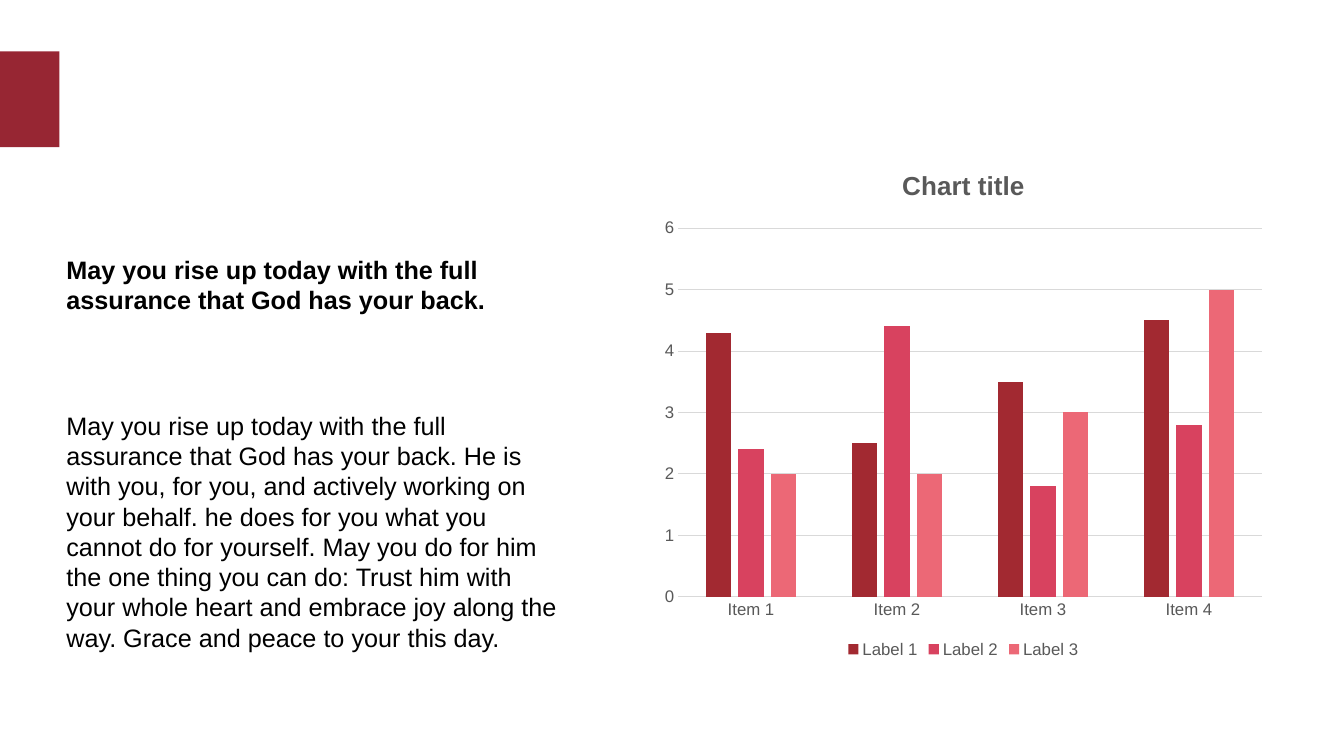
"""Build a slide with a blessing on the left and a clustered column chart on the right."""
import pptx
import pptx.chart.data
import pptx.dml.color
import pptx.enum.chart
import pptx.enum.shapes
import pptx.enum.text
import pptx.util
from pptx.util import Inches

HEADING = "May you rise up today with the full assurance that God has your back."
BODY = (
    "May you rise up today with the full assurance that God has your back. "
    "He is with you, for you, and actively working on your behalf. "
    "he does for you what you cannot do for yourself. "
    "May you do for him the one thing you can do: Trust him with your whole heart "
    "and embrace joy along the way. Grace and peace to your this day."
)
CHART_TITLE = "Chart title"
CATEGORIES = ["Item 1", "Item 2", "Item 3", "Item 4"]
SERIES = {
    "Label 1": (4.3, 2.5, 3.5, 4.5),
    "Label 2": (2.4, 4.4, 1.8, 2.8),
    "Label 3": (2, 2, 3, 5),
}
THEME = {
    "font": "Arial",
    "accent": "972633",
    "text": "000000",
    "muted": "595959",
    "grid": "D9D9D9",
    "series": ["A22931", "D8425F", "EC6876"],
    "text_size": 18,
    "title_size": 18.6,
    "label_size": 12,
    "line_width": 0.75,
}
TEXT_LEFT = 0.56


def color(value):
    return pptx.dml.color.RGBColor.from_string(value)


def style_font(font, size, value, bold=False):
    font.name = THEME["font"]
    font.size = pptx.util.Pt(size)
    font.color.rgb = color(value)
    font.bold = bold


def style_line(line):
    line.color.rgb = color(THEME["grid"])
    line.width = pptx.util.Pt(THEME["line_width"])


def add_accent(slide):
    accent = slide.shapes.add_shape(
        pptx.enum.shapes.MSO_SHAPE.RECTANGLE, 0, Inches(0.51), Inches(0.59), Inches(0.95)
    )
    accent.shadow.inherit = False
    accent.fill.solid()
    accent.fill.fore_color.rgb = color(THEME["accent"])
    accent.line.fill.background()


def add_text(slide, text, top, width, height, bold=False):
    box = slide.shapes.add_textbox(
        Inches(TEXT_LEFT), Inches(top), Inches(width), Inches(height)
    )
    frame = box.text_frame
    frame.word_wrap = True
    frame.auto_size = pptx.enum.text.MSO_AUTO_SIZE.SHAPE_TO_FIT_TEXT
    paragraph = frame.paragraphs[0]
    paragraph.text = text
    style_font(paragraph.font, THEME["text_size"], THEME["text"], bold)


def add_column_chart(slide):
    data = pptx.chart.data.CategoryChartData()
    data.categories = CATEGORIES
    for name, values in SERIES.items():
        data.add_series(name, values)
    chart = slide.shapes.add_chart(
        pptx.enum.chart.XL_CHART_TYPE.COLUMN_CLUSTERED,
        Inches(6.47), Inches(1.47), Inches(6.17), Inches(5.1), data,
    ).chart
    style_font(chart.font, THEME["label_size"], THEME["muted"])

    chart.has_title = True
    title = chart.chart_title
    title.include_in_layout = False
    paragraph = title.text_frame.paragraphs[0]
    paragraph.text = CHART_TITLE
    style_font(paragraph.font, THEME["title_size"], THEME["muted"], bold=True)

    chart.has_legend = True
    chart.legend.position = pptx.enum.chart.XL_LEGEND_POSITION.BOTTOM
    chart.legend.include_in_layout = False
    style_font(chart.legend.font, THEME["label_size"], THEME["muted"])

    for axis in (chart.category_axis, chart.value_axis):
        axis.major_tick_mark = pptx.enum.chart.XL_TICK_MARK.NONE
        axis.minor_tick_mark = pptx.enum.chart.XL_TICK_MARK.NONE
        style_font(axis.tick_labels.font, THEME["label_size"], THEME["muted"])
    style_line(chart.category_axis.format.line)
    value_axis = chart.value_axis
    value_axis.format.line.fill.background()
    value_axis.minimum_scale, value_axis.maximum_scale, value_axis.major_unit = 0, 6, 1
    value_axis.has_major_gridlines = True
    style_line(value_axis.major_gridlines.format.line)

    plot = chart.plots[0]
    plot.gap_width, plot.overlap = 219, -27
    plot.vary_by_categories = False
    for series, value in zip(plot.series, THEME["series"]):
        series.format.fill.solid()
        series.format.fill.fore_color.rgb = color(value)


def main():
    presentation = pptx.Presentation()
    presentation.slide_width = Inches(13.33)
    presentation.slide_height = Inches(7.5)
    slide = presentation.slides.add_slide(presentation.slide_layouts[6])
    add_accent(slide)
    add_text(slide, BODY, 4.02, 5.16, 2.22)
    add_text(slide, HEADING, 2.47, 4.82, 0.71, bold=True)
    add_column_chart(slide)
    presentation.save("out.pptx")


if __name__ == "__main__":
    main()
